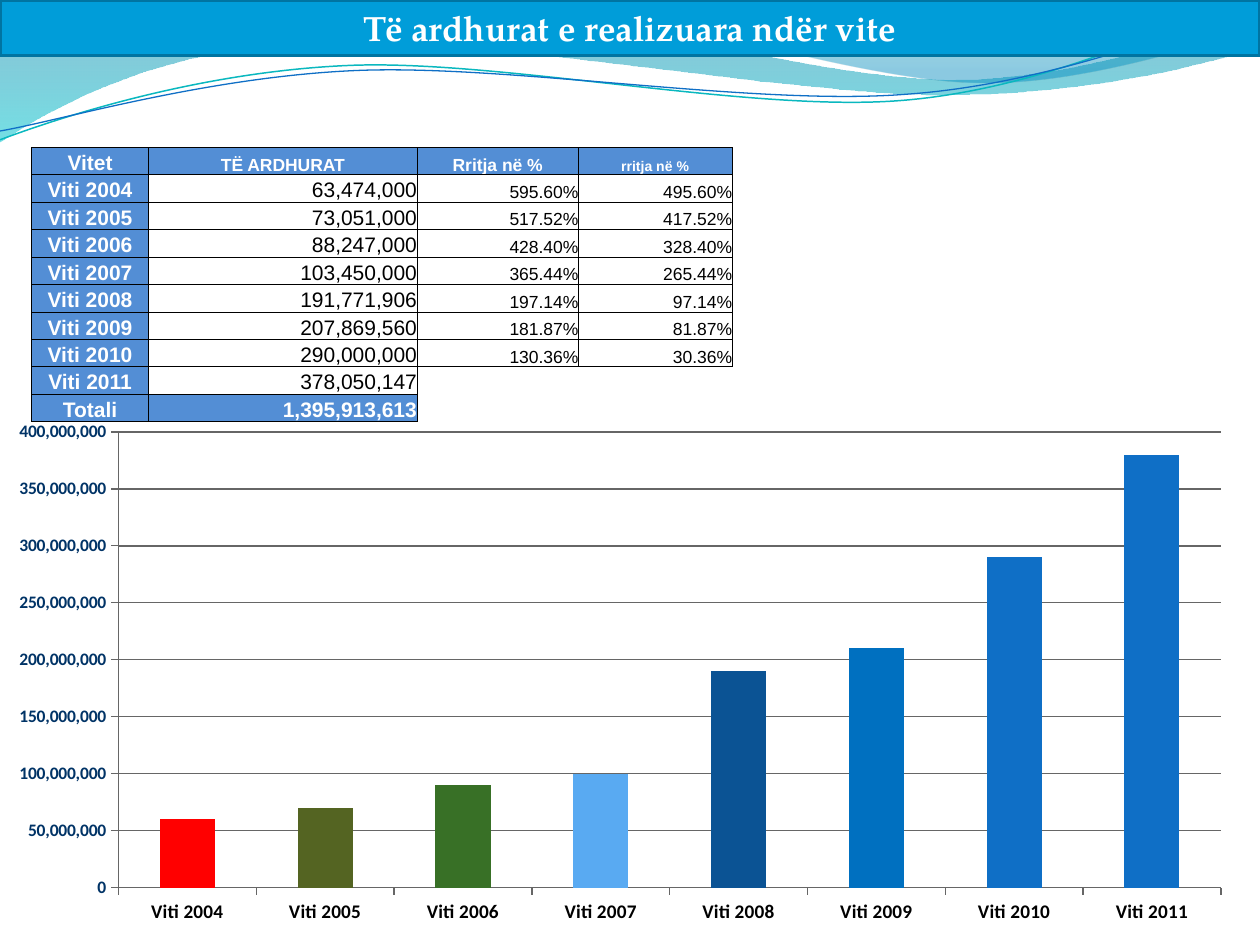
from dataclasses import dataclass

from lxml.etree import SubElement
from pptx import Presentation
from pptx.chart.data import CategoryChartData
from pptx.dml.color import RGBColor
from pptx.enum.chart import XL_CHART_TYPE, XL_TICK_LABEL_POSITION, XL_TICK_MARK
from pptx.enum.shapes import MSO_SHAPE
from pptx.enum.text import MSO_ANCHOR, MSO_AUTO_SIZE, PP_ALIGN
from pptx.oxml.ns import qn
from pptx.util import Inches, Pt


@dataclass(frozen=True)
class Theme:
    title_font: str = "TeX Gyre Pagella"
    table_font: str = "Arial"
    chart_font: str = "Calibri"
    title_size: float = 20
    cell_size: float = 12
    percent_size: float = 10
    note_size: float = 8
    category_size: float = 11
    value_size: float = 10
    white: str = "FFFFFF"
    black: str = "000000"
    bar: str = "009DD9"
    bar_edge: str = "0074A1"
    header: str = "538ED5"
    axis_text: str = "003366"
    grid: str = "666666"
    column: str = "0F6FC6"
    wave_line: str = "0AB8BF"


THEME = Theme()

# Year, income, ratio of 2011 to the year, growth up to 2011, column colour
INCOME = [
    ("Viti 2004", 63474000, "595.60%", "495.60%", "FF0000"),
    ("Viti 2005", 73051000, "517.52%", "417.52%", "546422"),
    ("Viti 2006", 88247000, "428.40%", "328.40%", "387026"),
    ("Viti 2007", 103450000, "365.44%", "265.44%", "59AAF2"),
    ("Viti 2008", 191771906, "197.14%", "97.14%", "0B5394"),
    ("Viti 2009", 207869560, "181.87%", "81.87%", "0070C0"),
    ("Viti 2010", 290000000, "130.36%", "30.36%", THEME.column),
    ("Viti 2011", 378050147, "", "", THEME.column),
]

# Each wave is a start point and segments: one point is a line, three a Bézier curve
LEFT_WAVE = (0, 0), [
    [(4.4, -0.01)],
    [(4.76, 0.17), (6.64, 0.63), (7.58, 0.63)],
    [(8.53, 0.63), (9.58, 0.26), (10, 0.09)],
    [(10.01, 0.36)],
    [(9.83, 0.44), (8.7, 0.76), (7.46, 0.75)],
    [(6.22, 0.75), (3.82, 0.28), (2.57, 0.34)],
    [(1.29, 0.36), (0.46, 0.83), (-0.01, 1.13)],
]
RIGHT_WAVE = (4.79, -0.01), [
    [(5.09, 0.11), (6.82, 0.62), (7.69, 0.65)],
    [(8.56, 0.69), (9.61, 0.32), (10, 0.21)],
    [(10, 0)],
]
UPPER_LINE = (0, 1.11), [
    [(0.48, 0.93), (1.58, 0.57), (2.77, 0.52)],
    [(3.95, 0.47), (5.93, 0.89), (7.13, 0.8)],
    [(8.33, 0.71), (9.38, 0.15), (9.98, -0.02)],
]
LOWER_LINE = (0, 1.04), [
    [(0.47, 0.96), (1.64, 0.61), (2.83, 0.56)],
    [(4.03, 0.51), (5.97, 0.84), (7.17, 0.75)],
    [(8.36, 0.67), (9.41, 0.21), (10, 0.06)],
]


def rgb(color):
    return RGBColor.from_string(color)


def style_font(font, name, size, color, bold=False):
    font.name, font.size, font.bold = name, Pt(size), bold
    font.color.rgb = rgb(color)


def add_curve(s, left, top, wave, close):
    """Draw a wave outline, turning each three-point segment into a Bézier curve."""
    start, segments = wave

    def place(point):
        return left + Inches(point[0]), top + Inches(point[1])

    builder = s.shapes.build_freeform(*place(start))
    builder.add_line_segments([place(pt) for seg in segments for pt in seg], close=close)
    sp = builder.convert_to_shape()
    sp.shadow.inherit = False
    lines = iter(list(sp._element.iter(qn("a:lnTo"))))
    for seg in segments:
        parts = [next(lines) for _ in seg]
        if len(parts) == 3:
            parts[0].tag = qn("a:cubicBezTo")
            for part in parts[1:]:
                parts[0].append(part[0])
                part.getparent().remove(part)
    return sp


def add_waves(s, left, top):
    fills = [
        (LEFT_WAVE, [(0, "0074A1", 45), (1, "00C6CF", 55)]),
        (RIGHT_WAVE, [(0, "00A1A9", 30), (0.8, "008BBF", 45)]),
    ]
    for wave, stops in fills:
        sp = add_curve(s, left, top, wave, close=True)
        sp.line.fill.background()
        sp.fill.gradient()
        sp.fill.gradient_angle = 270
        for stop, (position, color, _) in zip(sp.fill.gradient_stops, stops):
            stop.position, stop.color.rgb = position, rgb(color)
        for clr, (_, _, opacity) in zip(sp._element.iter(qn("a:srgbClr")), stops):
            SubElement(clr, qn("a:alpha"), val=str(opacity * 1000))

    for wave, color, width in [(UPPER_LINE, THEME.wave_line, 0.85),
                               (LOWER_LINE, THEME.column, 0.75)]:
        sp = add_curve(s, left, top, wave, close=False)
        sp.fill.background()
        sp.line.color.rgb, sp.line.width = rgb(color), Pt(width)


def add_borders(cell):
    tc_pr = cell._tc.get_or_add_tcPr()
    for side in ("lnL", "lnR", "lnT", "lnB"):
        ln = SubElement(tc_pr, qn(f"a:{side}"), w=str(Pt(0.5)))
        SubElement(SubElement(ln, qn("a:solidFill")), qn("a:srgbClr"), val=THEME.black)


def fill_cell(cell, text, size, align, header):
    cell.margin_left = cell.margin_right = cell.margin_top = cell.margin_bottom = 0
    cell.vertical_anchor = MSO_ANCHOR.BOTTOM
    p = cell.text_frame.paragraphs[0]
    if text:
        add_borders(cell)
        p.text, p.alignment = text, align
        style_font(p.runs[0].font, THEME.table_font, size,
                   THEME.white if header else THEME.black, header)
    else:
        SubElement(p._p, qn("a:endParaRPr"), sz=str(size * 100))
    if header:
        cell.fill.solid()
        cell.fill.fore_color.rgb = rgb(THEME.header)
    else:
        cell.fill.background()


def add_income_table(s, left, top, width, height):
    rows = [("Vitet", "TË ARDHURAT", "Rritja në %", "rritja në %")]
    rows += [(year, f"{income:,}", ratio, growth) for year, income, ratio, growth, _ in INCOME]
    rows.append(("Totali", f"{sum(row[1] for row in INCOME):,}", "", ""))
    table = s.shapes.add_table(len(rows), 4, left, top, width, height).table
    table.first_row = table.horz_banding = False
    style = next(table._tbl.iter(qn("a:tableStyleId")))
    style.text = "{2D5ABB26-0587-4C30-8999-92F81FD0307C}"  # no style, no grid
    for column, column_width in zip(table.columns, (0.93, 2.13, 1.28, 1.22)):
        column.width = Inches(column_width)

    head_sizes = (THEME.cell_size, THEME.percent_size, THEME.percent_size, THEME.note_size)
    body_sizes = (THEME.cell_size, THEME.cell_size, THEME.percent_size, THEME.percent_size)
    last = len(rows) - 1
    for i, row in enumerate(rows):
        for j, text in enumerate(row):
            header = i == 0 or j == 0 or (i == last and bool(text))
            align = PP_ALIGN.CENTER if i == 0 or j == 0 else PP_ALIGN.RIGHT
            size = (body_sizes if i else head_sizes)[j]
            fill_cell(table.cell(i, j), text, size, align, header)


def add_income_chart(s, left, top, width, height):
    data = CategoryChartData(number_format="#,##0")
    data.categories = [row[0] for row in INCOME]
    data.add_series("Series 1", [round(row[1], -7) for row in INCOME])
    chart = s.shapes.add_chart(XL_CHART_TYPE.COLUMN_STACKED, left, top, width, height, data).chart
    chart.has_legend = chart.has_title = False
    style_font(chart.font, THEME.chart_font, THEME.value_size, THEME.black)

    plot = chart.plots[0]
    plot.gap_width, plot.overlap, plot.vary_by_categories = 150, 100, False
    series = plot.series[0]
    series.invert_if_negative = False
    for fmt, color in [(series.format, THEME.column)] + [
            (series.points[i].format, row[4]) for i, row in enumerate(INCOME)
            if row[4] != THEME.column]:
        fmt.fill.solid()
        fmt.fill.fore_color.rgb = rgb(color)

    cat, val = chart.category_axis, chart.value_axis
    cat.tick_label_position = XL_TICK_LABEL_POSITION.LOW
    val.minimum_scale, val.maximum_scale, val.major_unit = 0, 400000000, 50000000
    val.tick_labels.number_format, val.tick_labels.number_format_is_linked = "#,##0", False
    grid_line = val.major_gridlines.format.line
    grid_line.color.rgb, grid_line.width = rgb(THEME.grid), Pt(0.8)
    for axis, size, color in [(cat, THEME.category_size, THEME.black),
                              (val, THEME.value_size, THEME.axis_text)]:
        axis.major_tick_mark = XL_TICK_MARK.OUTSIDE
        axis.format.line.color.rgb = rgb(THEME.grid)
        style_font(axis.tick_labels.font, THEME.chart_font, size, color, True)

    plot_area = next(chart._chartSpace.iter(qn("c:plotArea")))
    for old in plot_area.findall(qn("c:layout")):
        plot_area.remove(old)
    layout = plot_area.makeelement(qn("c:layout"))
    plot_area.insert(0, layout)
    manual = SubElement(layout, qn("c:manualLayout"))
    for tag, value in [("layoutTarget", "inner"), ("xMode", "edge"), ("yMode", "edge"),
                       ("x", "0.094"), ("y", "0.042"), ("w", "0.875"), ("h", "0.851")]:
        SubElement(manual, qn(f"c:{tag}"), val=value)


def add_title_bar(s, left, top, width, height):
    sp = s.shapes.add_shape(MSO_SHAPE.RECTANGLE, left, top, width, height)
    sp.shadow.inherit = False
    sp.fill.solid()
    sp.fill.fore_color.rgb = rgb(THEME.bar)
    sp.line.color.rgb, sp.line.width = rgb(THEME.bar_edge), Pt(2)
    tf = sp.text_frame
    tf.word_wrap, tf.auto_size = True, MSO_AUTO_SIZE.SHAPE_TO_FIT_TEXT
    tf.text = "Të ardhurat e realizuara ndër vite"
    p = tf.paragraphs[0]
    p.alignment = PP_ALIGN.CENTER
    style_font(p.runs[0].font, THEME.title_font, THEME.title_size, THEME.white, True)


def main():
    prs = Presentation()
    prs.slide_width, prs.slide_height = Inches(10), Inches(7.5)
    s = prs.slides.add_slide(prs.slide_layouts[6])
    add_waves(s, 0, 0)
    add_income_table(s, Inches(0.25), Inches(1.17), Inches(5.56), Inches(2.18))
    add_income_chart(s, 0, Inches(3.25), prs.slide_width, Inches(4.25))
    add_title_bar(s, 0, 0, prs.slide_width, Inches(0.44))
    prs.save("out.pptx")


if __name__ == "__main__":
    main()
